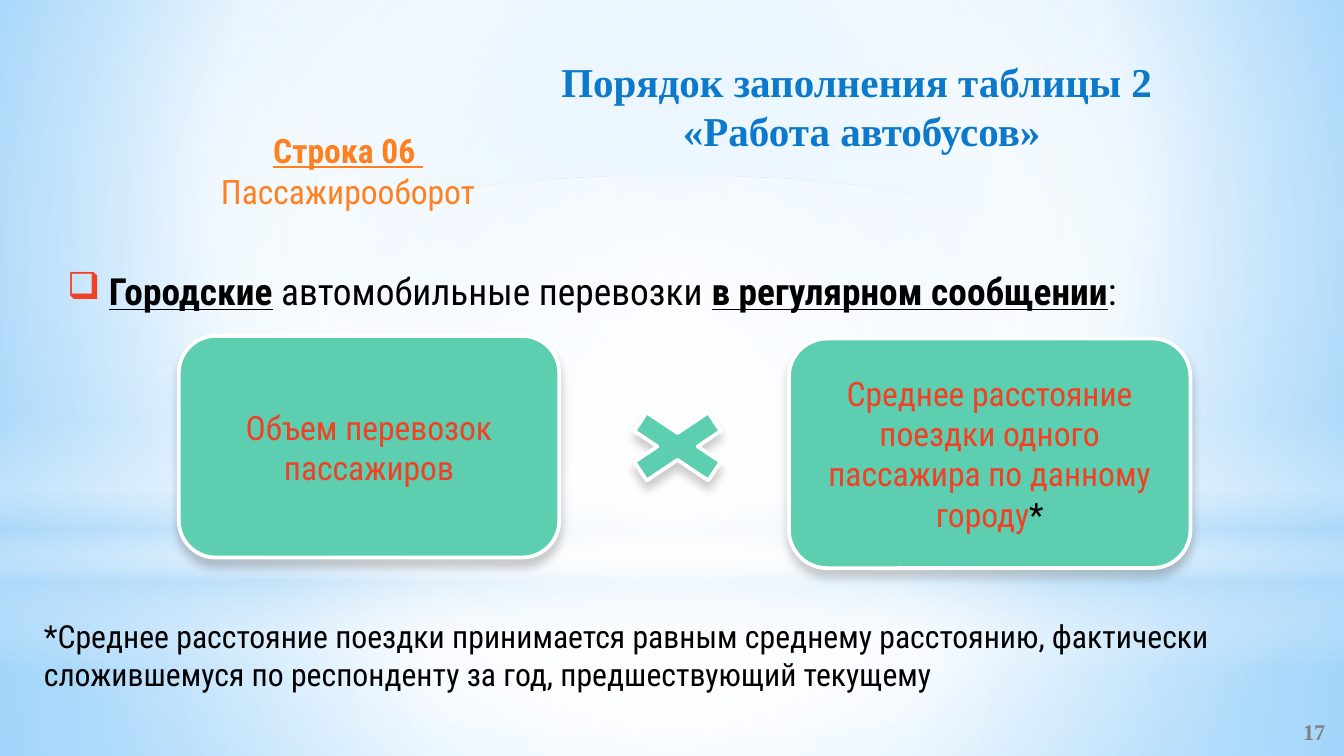
from dataclasses import dataclass
from typing import Optional

from lxml import etree
from pptx import Presentation
from pptx.dml.color import RGBColor
from pptx.enum.shapes import MSO_SHAPE
from pptx.enum.text import MSO_ANCHOR, MSO_AUTO_SIZE, PP_ALIGN
from pptx.oxml.ns import qn
from pptx.util import Cm, Pt

RECTANGLE, ELLIPSE = MSO_SHAPE.RECTANGLE, MSO_SHAPE.OVAL
CARD, MULTIPLY = MSO_SHAPE.ROUNDED_RECTANGLE, MSO_SHAPE.MATH_MULTIPLY
LEFT, CENTER, RIGHT = PP_ALIGN.LEFT, PP_ALIGN.CENTER, PP_ALIGN.RIGHT
TOP, MIDDLE = MSO_ANCHOR.TOP, MSO_ANCHOR.MIDDLE
TITLE_ONLY = 5
WIDTH, HEIGHT = 25.4, 14.29


@dataclass(frozen=True)
class Theme:
    body_font: str = "Roboto Condensed"
    title_font: str = "Times New Roman"
    title: str = "0D79CA"
    orange: str = "FF8021"
    red: str = "F14124"
    green: str = "5DCEAF"
    black: str = "000000"
    white: str = "FFFFFF"
    grey: str = "808080"
    mist: str = "B4DCFA"
    sky: str = "9ED5FF"
    deep_sky: str = "5BB9FF"
    title_size: int = 22
    lead_size: int = 20
    text_size: int = 18
    note_size: int = 17
    number_size: int = 12


THEME = Theme()


@dataclass(frozen=True)
class Box:
    """A place on the slide, in centimetres."""
    left: float
    top: float
    width: float
    height: float

    def lengths(self) -> tuple:
        return Cm(self.left), Cm(self.top), Cm(self.width), Cm(self.height)


@dataclass(frozen=True)
class Stop:
    position: int
    color: str
    opacity: int = 100


@dataclass(frozen=True)
class Gradient:
    """Linear when an angle is given, otherwise circular around the focus."""
    stops: tuple
    angle: Optional[int] = None
    focus: tuple = (50, 50, 50, 50)


@dataclass(frozen=True)
class Layer:
    kind: MSO_SHAPE
    box: Box
    gradient: Gradient


@dataclass(frozen=True)
class Run:
    text: str
    strong: bool = False
    color: Optional[str] = None


BACKGROUND = Gradient((Stop(0, THEME.sky), Stop(60, THEME.white), Stop(100, THEME.deep_sky)),
                      focus=(20, 10, 20, 60))
LAYERS = (
    Layer(RECTANGLE, Box(0, 10.64, WIDTH, 3.65), Gradient((
        Stop(0, THEME.white, 91), Stop(37, THEME.white, 76), Stop(100, THEME.mist, 79)))),
    Layer(RECTANGLE, Box(0, 0, WIDTH, 10.64), Gradient((
        Stop(0, THEME.white, 89), Stop(48, THEME.white, 62), Stop(100, THEME.mist, 79)))),
    Layer(RECTANGLE, Box(0, 7.85, WIDTH, 4.78), Gradient((
        Stop(0, THEME.white, 0), Stop(29, THEME.white, 30), Stop(45, THEME.mist, 40),
        Stop(55, THEME.white, 26), Stop(65, THEME.mist, 60), Stop(100, THEME.white, 0)), angle=90)),
    Layer(ELLIPSE, Box(0, 3.33, WIDTH, 10.64), Gradient((
        Stop(0, THEME.white), Stop(56, THEME.white, 0)))),
)
FACTORS = (
    (Box(3.38, 6.35, 7.19, 4.19), (Run("Объем перевозок пассажиров"),)),
    (Box(14.91, 6.4, 7.59, 4.34),
     (Run("Среднее расстояние поездки одного пассажира по данному городу"),
      Run("*", color=THEME.black))),
)


def add_element(parent, tag: str, **attributes):
    return etree.SubElement(parent, qn(tag), {key: str(value) for key, value in attributes.items()})


def add_color(parent, color: str, opacity: int) -> None:
    add_element(add_element(parent, "a:srgbClr", val=color), "a:alpha", val=opacity * 1000)


def apply_gradient(properties, gradient: Gradient) -> None:
    """Put the gradient in place of the solid fill in the given properties."""
    fill = etree.Element(qn("a:gradFill"), rotWithShape="1")
    stops = add_element(fill, "a:gsLst")
    for stop in gradient.stops:
        add_color(add_element(stops, "a:gs", pos=stop.position * 1000), stop.color, stop.opacity)
    if gradient.angle is not None:
        add_element(fill, "a:lin", ang=gradient.angle * 60000, scaled=0)
    else:
        sides = {side: value * 1000 for side, value in zip("ltrb", gradient.focus)}
        add_element(add_element(fill, "a:path", path="circle"), "a:fillToRect", **sides)
    properties.replace(properties.find(qn("a:solidFill")), fill)


def add_layer(slide, layer: Layer) -> None:
    shape = slide.shapes.add_shape(layer.kind, *layer.box.lengths())
    shape.shadow.inherit = False
    shape.line.fill.background()
    shape.fill.solid()
    apply_gradient(shape.element.spPr, layer.gradient)


def write_text(shape, *runs: Run, size: int, color: str, font: str = THEME.body_font,
               align: PP_ALIGN = LEFT, anchor: MSO_ANCHOR = TOP, space_before: int = 0):
    frame = shape.text_frame
    frame.word_wrap = True
    frame.auto_size = MSO_AUTO_SIZE.NONE
    frame.vertical_anchor = anchor
    paragraph = frame.paragraphs[0]
    paragraph.alignment = align
    paragraph.space_before = Pt(space_before)
    for index, part in enumerate(runs):
        for line_index, line in enumerate(part.text.split("\n")):
            if line_index:
                paragraph.add_line_break()
            run = paragraph.add_run()
            run.text = line
            run.font.name = font
            run.font.size = Pt(size)
            run.font.bold = part.strong
            run.font.underline = part.strong and font == THEME.body_font
            run.font.color.rgb = RGBColor.from_string(part.color or color)
    return paragraph


def add_text(slide, box: Box, *runs: Run, **text_format):
    return write_text(slide.shapes.add_textbox(*box.lengths()), *runs, **text_format)


def add_raised_shape(slide, kind: MSO_SHAPE, box: Box):
    """Add a green shape with a white edge and a soft shadow below."""
    shape = slide.shapes.add_shape(kind, *box.lengths())
    shape.fill.solid()
    shape.fill.fore_color.rgb = RGBColor.from_string(THEME.green)
    shape.line.color.rgb = RGBColor.from_string(THEME.white)
    shape.line.width = Pt(2)
    shape.shadow.inherit = False
    shadow = add_element(shape.element.spPr.find(qn("a:effectLst")), "a:outerShdw",
                         blurRad=Pt(5), dist=Pt(4), dir=90 * 60000, rotWithShape=0)
    add_color(shadow, THEME.black, 20)
    return shape


def add_bullet(paragraph, mark: str, color: str, indent: float) -> None:
    properties = paragraph._p.get_or_add_pPr()
    properties.set("marL", str(Cm(indent)))
    properties.set("indent", str(-Cm(indent)))
    add_element(add_element(properties, "a:buClr"), "a:srgbClr", val=color)
    add_element(properties, "a:buChar", char=mark)


def main() -> None:
    presentation = Presentation()
    presentation.slide_width, presentation.slide_height = Cm(WIDTH), Cm(HEIGHT)
    slide = presentation.slides.add_slide(presentation.slide_layouts[TITLE_ONLY])
    slide.background.fill.solid()
    apply_gradient(slide.element.find(".//" + qn("p:bgPr")), BACKGROUND)
    for layer in LAYERS:
        add_layer(slide, layer)

    title = slide.shapes.title
    slide.shapes.element.append(title.element)  # bring above the backdrop
    title.left, title.top, title.width, title.height = Box(8.46, 0.94, 15.65, 2.21).lengths()
    write_text(title, Run("Порядок заполнения таблицы 2 \n«Работа автобусов»", strong=True),
               size=THEME.title_size, color=THEME.title, font=THEME.title_font, align=CENTER)
    add_text(slide, Box(20.22, 13.44, 5.08, 0.76), Run("17", strong=True), size=THEME.number_size,
             color=THEME.grey, font=THEME.title_font, align=RIGHT, anchor=MIDDLE)
    add_text(slide, Box(3.38, 2.34, 6.4, 1.8), Run("Строка 06  ", strong=True),
             Run("Пассажирооборот"), size=THEME.text_size, color=THEME.orange,
             align=CENTER, space_before=6)
    lead = add_text(slide, Box(1.02, 4.95, 21.21, 1.12), Run("Городские", strong=True),
                    Run(" автомобильные перевозки "), Run("в регулярном сообщении", strong=True),
                    Run(":"), size=THEME.lead_size, color=THEME.black)
    add_bullet(lead, "❑", THEME.red, 0.79)

    for box, runs in FACTORS:
        write_text(add_raised_shape(slide, CARD, box), *runs, size=THEME.text_size,
                   color=THEME.red, align=CENTER, anchor=MIDDLE)
    add_raised_shape(slide, MULTIPLY, Box(11.46, 7.54, 2.69, 1.8))
    add_text(slide, Box(0.58, 11.53, 23.5, 1.7),
             Run("*Среднее расстояние поездки принимается равным среднему расстоянию, фактически "
                 "сложившемуся по респонденту за год, предшествующий текущему"),
             size=THEME.note_size, color=THEME.black)
    presentation.save("out.pptx")


if __name__ == "__main__":
    main()
